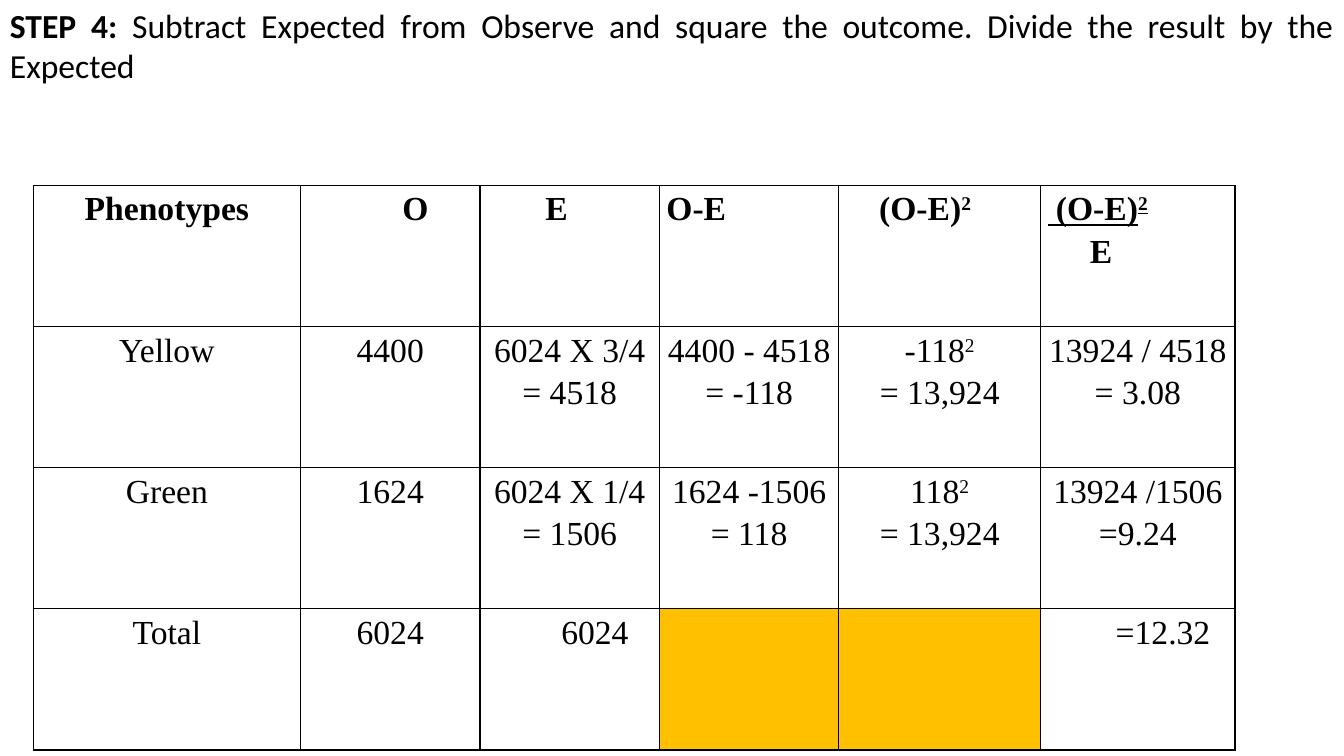
from dataclasses import dataclass

from lxml import etree
from pptx import Presentation
from pptx.dml.color import RGBColor
from pptx.enum.text import MSO_AUTO_SIZE, PP_ALIGN
from pptx.oxml.ns import qn
from pptx.slide import Slide
from pptx.table import _Cell
from pptx.text.text import TextFrame, _Paragraph
from pptx.util import Inches, Pt

LEFT, CENTER, JUSTIFY = PP_ALIGN.LEFT, PP_ALIGN.CENTER, PP_ALIGN.JUSTIFY
GROW = MSO_AUTO_SIZE.SHAPE_TO_FIT_TEXT
BLACK, GOLD = "000000", "FFC000"
BODY_FONT, TABLE_FONT = "Calibri", "Times New Roman"
TEXT_SIZE = 24
COLUMN_WIDTHS = (2.65, 1.78, 1.78, 1.78, 2, 1.93)
ROW_HEIGHT = 1.4


@dataclass(frozen=True)
class Run:
    text: str
    bold: bool = False
    underline: bool = False
    superscript: bool = False


@dataclass(frozen=True)
class Para:
    runs: tuple[Run, ...]
    align: PP_ALIGN = CENTER
    indent: float = 0
    space_after: float = 0


@dataclass(frozen=True)
class Entry:
    """Content of one table cell."""
    paras: tuple[Para, ...] = ()
    fill: str | None = None


def plain(text: str, indent: float = 0, space_after: float = 0) -> Entry:
    return Entry((Para((Run(text),), CENTER, indent, space_after),))


def heading(text: str, align: PP_ALIGN = LEFT, indent: float = 0,
            space_after: float = 0) -> Entry:
    return Entry((Para((Run(text, bold=True),), align, indent, space_after),))


def squared(base: str, result: str) -> Entry:
    return Entry((Para((Run(base), Run("2", superscript=True), Run("\n" + result))),))


BLOCKED = Entry(fill=GOLD)
SQUARE_HEADING = Entry((
    Para((Run("(O-E)", bold=True), Run("2", bold=True, superscript=True)), LEFT, 0.33),
))
RATIO_HEADING = Entry((
    Para((Run(" (O-E)", bold=True, underline=True),
          Run("2", bold=True, underline=True, superscript=True)), LEFT),
    Para((Run("E", bold=True),), LEFT, 0.42),
))
CHI_SQUARE_ROWS = (
    (heading("Phenotypes", CENTER), heading("O", CENTER, 0.5, 8),
     heading("E", indent=0.58), heading("O-E"), SQUARE_HEADING, RATIO_HEADING),
    (plain("Yellow"), plain("4400"), plain("6024 X 3/4\n= 4518"),
     plain("4400 - 4518\n= -118"), squared("-118", "= 13,924"),
     plain("13924 / 4518\n= 3.08")),
    (plain("Green"), plain("1624"), plain("6024 X 1/4\n= 1506"),
     plain("1624 -1506\n= 118"), squared("118", "= 13,924"),
     plain("13924 /1506\n=9.24")),
    (plain("Total"), plain("6024"), plain("6024", 0.5), BLOCKED, BLOCKED,
     plain("=12.32", 0.5, 8)),
)
STEP = Para((
    Run("STEP 4: ", bold=True),
    Run("Subtract Expected from Observe and square the outcome. "
        "Divide the result by the Expected"),
), JUSTIFY)


def rgb(value: str) -> RGBColor:
    return RGBColor.from_string(value)


def add_text(paragraph: _Paragraph, text: str, *, font: str, bold: bool = False,
             underline: bool = False, superscript: bool = False) -> None:
    for number, line in enumerate(text.split("\n")):
        if number:
            paragraph.add_line_break()
        if not line:
            continue
        run = paragraph.add_run()
        run.text = line
        run.font.name = font
        run.font.size = Pt(TEXT_SIZE)
        run.font.bold = bold
        run.font.underline = underline
        run.font.color.rgb = rgb(BLACK)
        if superscript:
            run._r.get_or_add_rPr().set("baseline", "30000")


def write_paras(frame: TextFrame, paras: tuple[Para, ...], font: str,
                line_spacing: float = 1) -> None:
    for number, para in enumerate(paras):
        paragraph = frame.add_paragraph() if number else frame.paragraphs[0]
        paragraph.alignment = para.align
        paragraph.line_spacing = line_spacing
        paragraph.space_after = Pt(para.space_after)
        if para.indent:
            paragraph._p.get_or_add_pPr().set("marL", str(Inches(para.indent)))
        for run in para.runs:
            add_text(paragraph, run.text, font=font, bold=run.bold,
                     underline=run.underline, superscript=run.superscript)


def set_borders(cell: _Cell) -> None:
    properties = cell._tc.get_or_add_tcPr()
    for side in ("lnL", "lnR", "lnT", "lnB"):
        line = etree.SubElement(properties, qn(f"a:{side}"), w=str(Pt(1)))
        fill = etree.SubElement(line, qn("a:solidFill"))
        etree.SubElement(fill, qn("a:srgbClr"), val=BLACK)


def fill_cell(cell: _Cell, entry: Entry) -> None:
    set_borders(cell)
    if entry.fill:
        cell.fill.solid()
        cell.fill.fore_color.rgb = rgb(entry.fill)
    else:
        cell.fill.background()
    cell.margin_left = cell.margin_right = Inches(0.07)
    cell.margin_top = cell.margin_bottom = 0
    write_paras(cell.text_frame, entry.paras, TABLE_FONT, 1.15)


def add_step(slide: Slide) -> None:
    frame = slide.shapes.add_textbox(0, 0, Inches(13.33), Inches(0.91)).text_frame
    frame.word_wrap = True
    frame.auto_size = GROW
    write_paras(frame, (STEP,), BODY_FONT)


def add_chi_square_table(slide: Slide) -> None:
    row_count = len(CHI_SQUARE_ROWS)
    table = slide.shapes.add_table(
        row_count, len(COLUMN_WIDTHS), Inches(0.33), Inches(1.84),
        Inches(sum(COLUMN_WIDTHS)), Inches(ROW_HEIGHT * row_count)).table
    table.first_row = table.horz_banding = False
    for column, width in zip(table.columns, COLUMN_WIDTHS):
        column.width = Inches(width)
    for row, entries in zip(table.rows, CHI_SQUARE_ROWS):
        row.height = Inches(ROW_HEIGHT)
        for cell, entry in zip(row.cells, entries):
            fill_cell(cell, entry)


def main() -> None:
    presentation = Presentation()
    presentation.slide_width = Inches(13.33)
    presentation.slide_height = Inches(7.5)
    slide = presentation.slides.add_slide(presentation.slide_layouts[6])
    add_step(slide)
    add_chi_square_table(slide)
    presentation.save("out.pptx")


if __name__ == "__main__":
    main()
